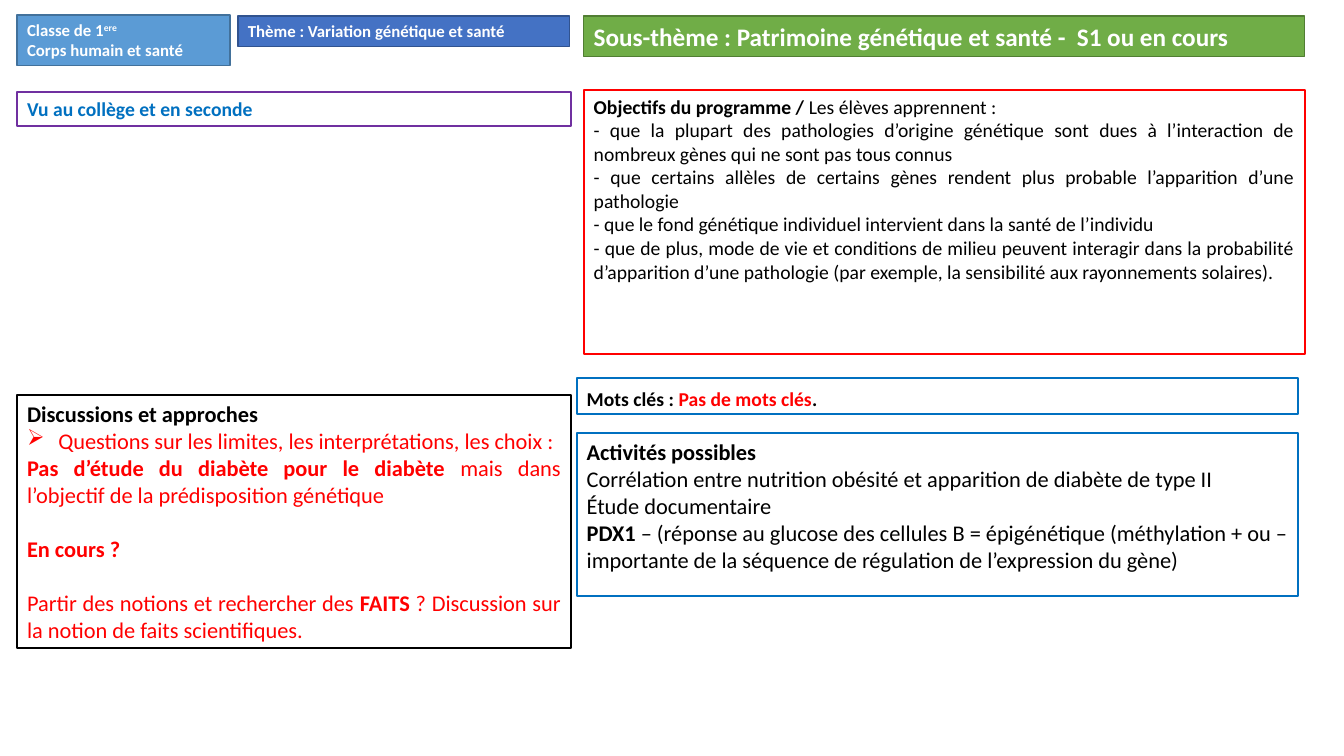
"""Build the lesson sheet on genetic heritage and health."""
import lxml.etree
import pptx
import pptx.dml.color
import pptx.enum.shapes
import pptx.enum.text
import pptx.oxml.ns
import pptx.util

Inches = pptx.util.Inches
Pt = pptx.util.Pt

THEME = {
    "font": "Calibri",
    "bullet font": "Wingdings",
    "colours": {
        "white": "FFFFFF", "black": "000000", "red": "FF0000", "blue": "0070C0",
        "purple": "7030A0", "sky": "5B9BD5", "sky edge": "42719B",
        "royal": "4472C4", "royal edge": "31538F",
        "green": "70AD47", "green edge": "517E33",
    },
    "sizes": {"label": 12, "note": 14, "body": 16, "title": 18},
    "lines": {"banner": 1, "frame": 1.5},
}
LEFT, RIGHT, RIGHT_LOWER = 0.17, 5.79, 5.72
LEFT_WIDTH, RIGHT_WIDTH = 5.49, 7.15
BULLET_INDENT = 0.31
ARROW_BULLET = "Ø"
BLANK_LINE = 19.5
BOLD = {"bold": True}
RED = {"colour": "red"}
RED_BOLD = {"colour": "red", "bold": True}
JUSTIFIED = {"justified": True}
AFTER_GAP = {"justified": True, "space_before": BLANK_LINE}

BANNERS = [
    ((LEFT, 0.15, 2.11, 0.5), "sky", "label", [
        ([("Classe de 1", BOLD), ("ere", {"bold": True, "superscript": True})], {}),
        ([("Corps humain et santé", BOLD)], {}),
    ]),
    ((2.36, 0.16, 3.29, 0.3), "royal", "label", [
        ([("Thème : Variation génétique et santé", BOLD)], {}),
    ]),
    ((RIGHT, 0.16, RIGHT_WIDTH, 0.4), "green", "title", [
        ([("Sous-thème : Patrimoine génétique et santé -  S1 ou en cours", BOLD)], {}),
    ]),
]

FRAMES = [
    ((RIGHT, 0.89, RIGHT_WIDTH, 2.62), "red", "note", [
        ([("Objectifs du programme / ", BOLD), ("Les élèves apprennent :", {})], {}),
        ([("- que la plupart des pathologies d’origine génétique sont dues à "
           "l’interaction de nombreux gènes qui ne sont pas tous connus", {})], JUSTIFIED),
        ([("- que certains allèles de certains gènes rendent plus probable "
           "l’apparition d’une pathologie", {})], JUSTIFIED),
        ([("- que le fond génétique individuel intervient dans la santé de "
           "l’individu", {})], JUSTIFIED),
        ([("- que de plus, mode de vie et conditions de milieu peuvent interagir "
           "dans la probabilité d’apparition d’une pathologie (par exemple, la "
           "sensibilité aux rayonnements solaires).", {})], JUSTIFIED),
    ]),
    ((LEFT, 0.91, LEFT_WIDTH, 0.34), "purple", "note", [
        ([("Vu au collège et en seconde", {"bold": True, "colour": "blue"})], {}),
    ]),
    ((LEFT, 3.92, LEFT_WIDTH, 2.51), "black", "body", [
        ([("Discussions et approches", BOLD)], {}),
        ([("Questions sur les limites, les interprétations, les choix :", RED)],
         {"justified": True, "bullet": ARROW_BULLET}),
        ([("Pas d’étude du diabète pour le diabète ", RED_BOLD),
          ("mais dans l’objectif de la prédisposition génétique", RED)], JUSTIFIED),
        ([("En cours ?", RED_BOLD)], AFTER_GAP),
        ([("Partir des notions et rechercher des ", RED), ("FAITS ", RED_BOLD),
          ("? Discussion sur la notion de faits scientifiques.", RED)], AFTER_GAP),
    ]),
    ((RIGHT_LOWER, 4.3, RIGHT_WIDTH, 1.61), "blue", "body", [
        ([("Activités possibles", BOLD)], JUSTIFIED),
        ([("Corrélation entre nutrition obésité et apparition de diabète de "
           "type II", {})], JUSTIFIED),
        ([("Étude documentaire", {})], JUSTIFIED),
        ([("PDX1", BOLD),
          (" – (réponse au glucose des cellules B = épigénétique (méthylation + ou – "
           "importante de la séquence de régulation de l’expression du gène)", {})],
         JUSTIFIED),
    ]),
    ((RIGHT_LOWER, 3.75, RIGHT_WIDTH, 0.36), "blue", "note", [
        ([("Mots clés : ", BOLD), ("Pas de mots clés", RED_BOLD), (".", BOLD)],
         {"line_spacing": 1.15}),
    ]),
]


def rgb(name):
    """Return the theme colour with this name."""
    return pptx.dml.color.RGBColor.from_string(THEME["colours"][name])


def add_run(paragraph, text, size, colour="black", bold=False, superscript=False):
    """Add formatted text to a paragraph."""
    run = paragraph.add_run()
    run.text = text
    run.font.name = THEME["font"]
    run.font.size = Pt(THEME["sizes"][size])
    run.font.bold = bold
    run.font.color.rgb = rgb(colour)
    if superscript:
        run.font._element.set("baseline", "30000")


def add_bullet(paragraph, character, colour):
    """Give a paragraph a coloured symbol bullet and a hanging indent."""
    properties = paragraph._p.get_or_add_pPr()
    indent = Inches(BULLET_INDENT)
    properties.set("marL", str(indent))
    properties.set("indent", str(-indent))
    qualified = pptx.oxml.ns.qn
    bullet_colour = lxml.etree.SubElement(properties, qualified("a:buClr"))
    value = lxml.etree.SubElement(bullet_colour, qualified("a:srgbClr"))
    value.set("val", THEME["colours"][colour])
    bullet_font = lxml.etree.SubElement(properties, qualified("a:buFont"))
    bullet_font.set("typeface", THEME["bullet font"])
    bullet_font.set("pitchFamily", "2")
    bullet_font.set("charset", "2")
    lxml.etree.SubElement(properties, qualified("a:buChar")).set("char", character)


def format_paragraph(paragraph, justified=False, space_before=0, line_spacing=1.0,
                     bullet=None):
    """Set alignment, spacing and bullet of a paragraph."""
    alignment = pptx.enum.text.PP_ALIGN
    paragraph.alignment = alignment.JUSTIFY if justified else alignment.LEFT
    paragraph.space_before = Pt(space_before)
    paragraph.line_spacing = line_spacing
    if bullet:
        add_bullet(paragraph, bullet, "red")


def add_box(slide, place, paragraphs, size, edge, line, fill=None, text_colour="black"):
    """Add a rectangle holding formatted paragraphs."""
    shape = slide.shapes.add_shape(
        pptx.enum.shapes.MSO_SHAPE.RECTANGLE, *map(Inches, place))
    shape.shadow.inherit = False
    shape.line.color.rgb = rgb(edge)
    shape.line.width = Pt(THEME["lines"][line])
    if fill:
        shape.fill.solid()
        shape.fill.fore_color.rgb = rgb(fill)
    else:
        shape.fill.background()
    frame = shape.text_frame
    frame.word_wrap = True
    frame.vertical_anchor = pptx.enum.text.MSO_ANCHOR.TOP
    for index, (runs, layout) in enumerate(paragraphs):
        paragraph = frame.add_paragraph() if index else frame.paragraphs[0]
        format_paragraph(paragraph, **layout)
        for text, style in runs:
            add_run(paragraph, text, size, **{"colour": text_colour, **style})


def main():
    """Create and save the presentation."""
    presentation = pptx.Presentation()
    presentation.slide_width = Inches(13.33)
    presentation.slide_height = Inches(7.5)
    slide = presentation.slides.add_slide(presentation.slide_layouts[6])
    for place, fill, size, paragraphs in BANNERS:
        add_box(slide, place, paragraphs, size, f"{fill} edge", "banner",
                fill=fill, text_colour="white")
    for place, edge, size, paragraphs in FRAMES:
        add_box(slide, place, paragraphs, size, edge, "frame")
    presentation.save("out.pptx")


if __name__ == "__main__":
    main()
